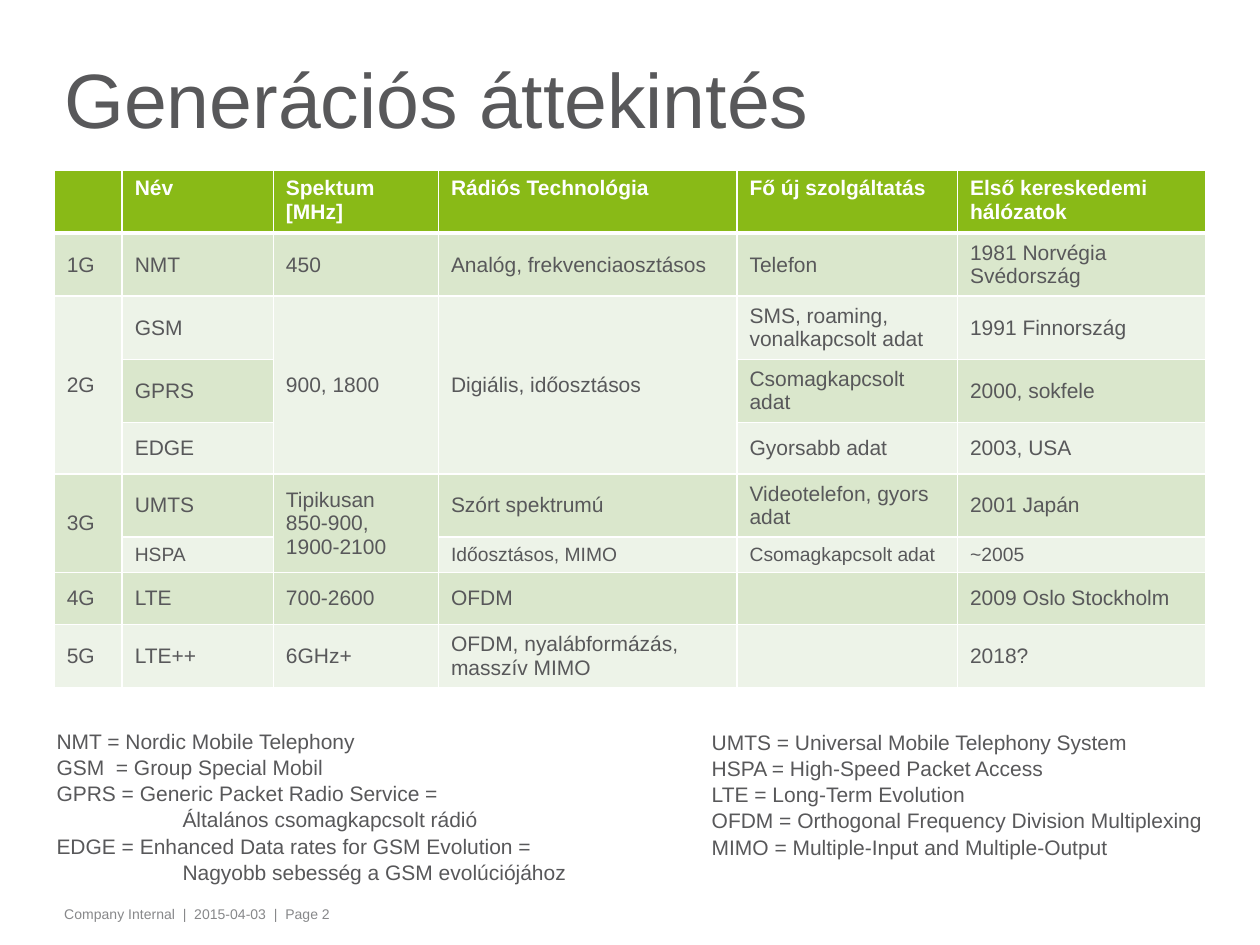
from dataclasses import dataclass

from lxml import etree
from pptx import Presentation
from pptx.dml.color import RGBColor
from pptx.enum.text import MSO_ANCHOR, MSO_AUTO_SIZE
from pptx.oxml.ns import qn
from pptx.util import Inches, Pt

TOP, MIDDLE, BOTTOM = MSO_ANCHOR.TOP, MSO_ANCHOR.MIDDLE, MSO_ANCHOR.BOTTOM
FIT_SHAPE = MSO_AUTO_SIZE.SHAPE_TO_FIT_TEXT


@dataclass(frozen=True)
class Theme:
    """Colours, font and type sizes of the slide."""
    font: str = "Arial"
    text: str = "58585A"
    muted: str = "87888A"
    white: str = "FFFFFF"
    header: str = "89BA17"
    bands: tuple = ("EDF3E8", "DAE7CC")
    title_size: int = 44
    body_size: int = 12
    small_size: int = 11
    footer_size: int = 8
    rule: int = 1
    header_rule: int = 3


THEME = Theme()

COLUMN_WIDTHS = [0.54, 1.2, 1.31, 2.37, 1.75, 1.97]
ROW_HEIGHT = 0.41
COMPACT_HEIGHT = 0.27
COMPACT_ROW = 6
MERGES = [(2, 0, 4), (2, 2, 4), (2, 3, 4), (5, 0, 6), (5, 2, 6)]
GENERATIONS = [
    ["", "Név", "Spektum [MHz]", "Rádiós Technológia", "Fő új szolgáltatás",
     "Első kereskedemi hálózatok"],
    ["1G", "NMT", "450", "Analóg, frekvenciaosztásos", "Telefon",
     "1981 Norvégia Svédország"],
    ["2G", "GSM", "900, 1800", "Digiális, időosztásos",
     "SMS, roaming, vonalkapcsolt adat", "1991 Finnország"],
    ["", "GPRS", "", "", "Csomagkapcsolt adat", "2000, sokfele"],
    ["", "EDGE", "", "", "Gyorsabb adat", "2003, USA"],
    ["3G", "UMTS", "Tipikusan\v850-900,\n1900-2100", "Szórt spektrumú",
     "Videotelefon, gyors adat", "2001 Japán"],
    ["", "HSPA", "", "Időosztásos, MIMO", "Csomagkapcsolt adat", "~2005"],
    ["4G", "LTE", "700-2600", "OFDM", "", "2009 Oslo Stockholm"],
    ["5G", "LTE++", "6GHz+", "OFDM, nyalábformázás, masszív MIMO", "", "2018?"],
]

EARLY_TERMS = [
    ("NMT = Nordic Mobile Telephony", 0),
    ("GSM  = Group Special Mobil", 0),
    ("GPRS = Generic Packet Radio Service =", 0),
    ("Általános csomagkapcsolt rádió", 1),
    ("EDGE = Enhanced Data rates for GSM Evolution =", 0),
    ("Nagyobb sebesség a GSM evolúciójához", 1),
]
LATER_TERMS = [
    ("UMTS = Universal Mobile Telephony System", 0),
    ("HSPA = High-Speed Packet Access", 0),
    ("LTE = Long-Term Evolution", 0),
    ("OFDM = Orthogonal Frequency Division Multiplexing", 0),
    ("MIMO = Multiple-Input and Multiple-Output", 0),
]


def add_run(paragraph, text, size, color, bold=False):
    """Add one formatted run, with line breaks between its lines."""
    for index, line in enumerate(text.split("\v")):
        if index:
            paragraph.add_line_break()
        run = paragraph.add_run()
        run.text = line
        run.font.name = THEME.font
        run.font.size = Pt(size)
        run.font.bold = bold
        run.font.color.rgb = RGBColor.from_string(color)


def add_text_box(slide, box, anchor, wrap=True):
    """Add an empty text box and return its text frame."""
    shape = slide.shapes.add_textbox(*map(Inches, box))
    frame = shape.text_frame
    frame.word_wrap = wrap
    frame.vertical_anchor = anchor
    return frame


def add_title(slide, box):
    """Place the slide title."""
    frame = add_text_box(slide, box, MIDDLE)
    frame.margin_left = frame.margin_right = Inches(0.08)
    frame.margin_top = frame.margin_bottom = 0
    paragraph = frame.paragraphs[0]
    paragraph.line_spacing = 0.75
    add_run(paragraph, "Generációs áttekintés", THEME.title_size, THEME.text)


def add_footer(slide, box):
    """Place the footer line."""
    frame = add_text_box(slide, box, TOP)
    frame.margin_left = frame.margin_right = Inches(0.08)
    add_run(frame.paragraphs[0], "Company Internal  |  2015-04-03  |  Page 2",
            THEME.footer_size, THEME.muted)


def add_terms(slide, box, terms):
    """Place a list of abbreviations, with continuation lines indented."""
    frame = add_text_box(slide, box, BOTTOM, wrap=False)
    frame.auto_size = FIT_SHAPE
    for index, (text, level) in enumerate(terms):
        paragraph = frame.add_paragraph() if index else frame.paragraphs[0]
        if index:
            paragraph.space_before = Pt(0.6)
        if level:
            properties = paragraph._p.get_or_add_pPr()
            properties.set("marL", str(Inches(level)))
            properties.set("indent", "0")
        add_run(paragraph, text, THEME.body_size, THEME.text)


def set_borders(cell, row):
    """Draw white cell borders, heavier below the header row."""
    widths = {"L": THEME.rule, "R": THEME.rule,
              "T": THEME.header_rule if row == 1 else THEME.rule,
              "B": THEME.header_rule if row == 0 else THEME.rule}
    properties = cell._tc.get_or_add_tcPr()
    for side, width in widths.items():
        line = etree.SubElement(properties, qn(f"a:ln{side}"), w=str(Pt(width)))
        fill = etree.SubElement(line, qn("a:solidFill"))
        etree.SubElement(fill, qn("a:srgbClr"), val=THEME.white)


def fill_cell(cell, row, text):
    """Style one table cell and write its text."""
    is_header = row == 0
    set_borders(cell, row)
    cell.fill.solid()
    color = THEME.header if is_header else THEME.bands[row % 2]
    cell.fill.fore_color.rgb = RGBColor.from_string(color)
    cell.vertical_anchor = TOP if is_header else MIDDLE
    size = THEME.small_size if row == COMPACT_ROW else THEME.body_size
    frame = cell.text_frame
    for index, line in enumerate(text.split("\n") if text else []):
        paragraph = frame.add_paragraph() if index else frame.paragraphs[0]
        add_run(paragraph, line, size, THEME.white if is_header else THEME.text,
                is_header)


def add_generation_table(slide, box):
    """Place the table of mobile network generations."""
    table = slide.shapes.add_table(
        len(GENERATIONS), len(COLUMN_WIDTHS), *map(Inches, box)).table
    for column, width in zip(table.columns, COLUMN_WIDTHS):
        column.width = Inches(width)
    for row, texts in enumerate(GENERATIONS):
        table.rows[row].height = Inches(
            COMPACT_HEIGHT if row == COMPACT_ROW else ROW_HEIGHT)
        for column, text in enumerate(texts):
            fill_cell(table.cell(row, column), row, text)
    for first, column, last in MERGES:
        table.cell(first, column).merge(table.cell(last, column))


def main():
    """Build and save the presentation."""
    presentation = Presentation()
    presentation.slide_width = Inches(10)
    presentation.slide_height = Inches(7.5)
    slide = presentation.slides.add_slide(presentation.slide_layouts[6])
    add_footer(slide, (0.43, 7.14, 8.09, 0.24))
    add_generation_table(slide, (0.43, 1.35, 9.13, 4.09))
    add_title(slide, (0.43, 0.26, 8.2, 1.19))
    add_terms(slide, (0.35, 5.76, 4.28, 1.31), EARLY_TERMS)
    add_terms(slide, (5.55, 5.76, 4.12, 1.11), LATER_TERMS)
    presentation.save("out.pptx")


if __name__ == "__main__":
    main()
